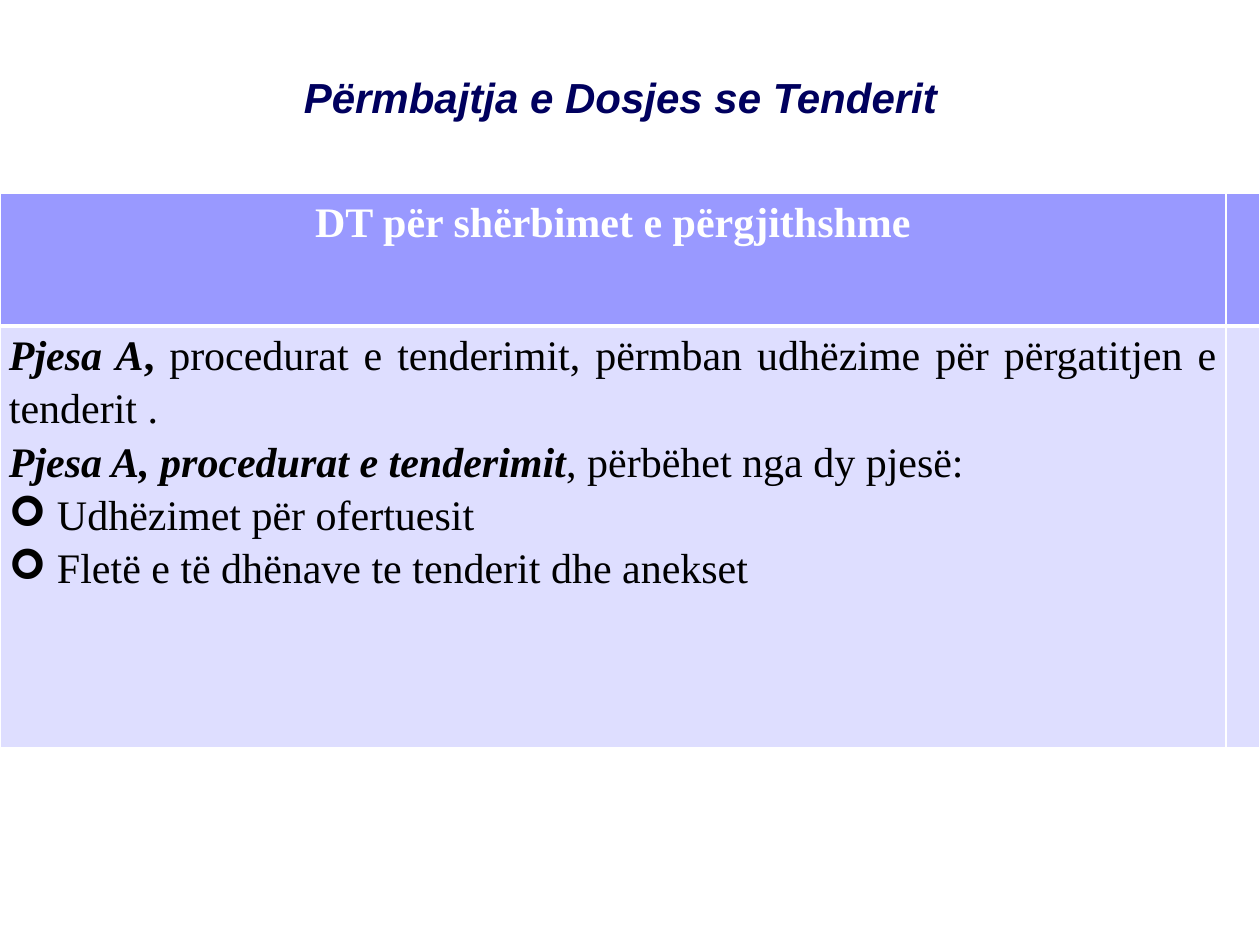
from lxml.etree import SubElement
from pptx import Presentation
from pptx.dml.color import RGBColor
from pptx.enum.text import MSO_ANCHOR, PP_ALIGN
from pptx.oxml.ns import qn
from pptx.util import Emu, Pt

PX = 914400 / 126
SERIF = "Times New Roman"
BULLET_INDENT = 48
HEADING = [("DT për shërbimet e përgjithshme", True, False)]
# Each paragraph: bulleted or not, then runs of (text, bold, italic).
BODY = [
    (False, [("Pjesa A", True, True), (",", True, False),
             (" procedurat e tenderimit, përmban udhëzime për përgatitjen e tenderit .",
              False, False)]),
    (False, [("Pjesa A, procedurat e tenderimit", True, True),
             (", përbëhet nga dy pjesë:", False, False)]),
    (True, [("Udhëzimet për ofertuesit", False, False)]),
    (True, [("Fletë e të dhënave te tenderit dhe anekset", False, False)]),
]


def px(length):
    return Emu(round(length * PX))


def rgb(color):
    return RGBColor.from_string(color)


def set_title(slide, text):
    title = slide.shapes.title
    title.left, title.top, title.width, title.height = map(px, (64, 65, 1113, 127))
    frame = title.text_frame
    frame.text = text
    frame.vertical_anchor = MSO_ANCHOR.TOP
    paragraph = frame.paragraphs[0]
    paragraph.alignment = PP_ALIGN.CENTER
    font = paragraph.font
    font.name, font.size, font.bold, font.italic = "Arial", Pt(24), True, True
    font.color.rgb = rgb("00005E")


def add_bullet(paragraph):
    properties = paragraph._p.get_or_add_pPr()
    properties.set("marL", str(px(BULLET_INDENT)))
    properties.set("indent", str(-px(BULLET_INDENT)))
    SubElement(properties, qn("a:buFont"), typeface="Wingdings")
    SubElement(properties, qn("a:buChar"), char="➢")


def write_paragraph(paragraph, runs, color, alignment, bulleted=False):
    paragraph.alignment = alignment
    paragraph.line_spacing = 1.15
    if bulleted:
        add_bullet(paragraph)
    font = paragraph.font
    font.name, font.size = SERIF, Pt(24)
    font.color.rgb = rgb(color)
    for text, bold, italic in runs:
        run = paragraph.add_run()
        run.text = text
        run.font.bold, run.font.italic = bold, italic


def style_cell(cell, fill, top, bottom):
    """Set insets, white borders (top and bottom widths in points) and fill."""
    cell.margin_left = cell.margin_right = px(9)
    cell.margin_top = cell.margin_bottom = 0
    properties = cell._tc.get_or_add_tcPr()
    for side, width in (("L", 1), ("R", 1), ("T", top), ("B", bottom)):
        border = SubElement(properties, qn(f"a:ln{side}"), w=str(Pt(width)))
        solid = SubElement(border, qn("a:solidFill"))
        SubElement(solid, qn("a:srgbClr"), val="FFFFFF")
    cell.fill.solid()
    cell.fill.fore_color.rgb = rgb(fill)


def add_dossier_table(slide):
    widths, heights = (1226, 34), (133, 422)
    table = slide.shapes.add_table(
        2, 2, 0, px(193), px(sum(widths)), px(sum(heights))).table
    for column, width in zip(table.columns, widths):
        column.width = px(width)
    row_styles = (("9999FF", 1, 3), ("DEDEFF", 3, 1))
    for row, height, style in zip(table.rows, heights, row_styles):
        row.height = px(height)
        for cell in row.cells:
            style_cell(cell, *style)

    heading = table.cell(0, 0).text_frame.paragraphs[0]
    write_paragraph(heading, HEADING, "FFFFFF", PP_ALIGN.CENTER)
    body = table.cell(1, 0).text_frame
    for index, (bulleted, runs) in enumerate(BODY):
        paragraph = body.add_paragraph() if index else body.paragraphs[0]
        write_paragraph(paragraph, runs, "000000", PP_ALIGN.JUSTIFY, bulleted)


def main():
    presentation = Presentation()
    presentation.slide_width, presentation.slide_height = px(1260), px(945)
    slide = presentation.slides.add_slide(presentation.slide_layouts[5])
    set_title(slide, "Përmbajtja e Dosjes se Tenderit")
    add_dossier_table(slide)
    presentation.save("out.pptx")


if __name__ == "__main__":
    main()
